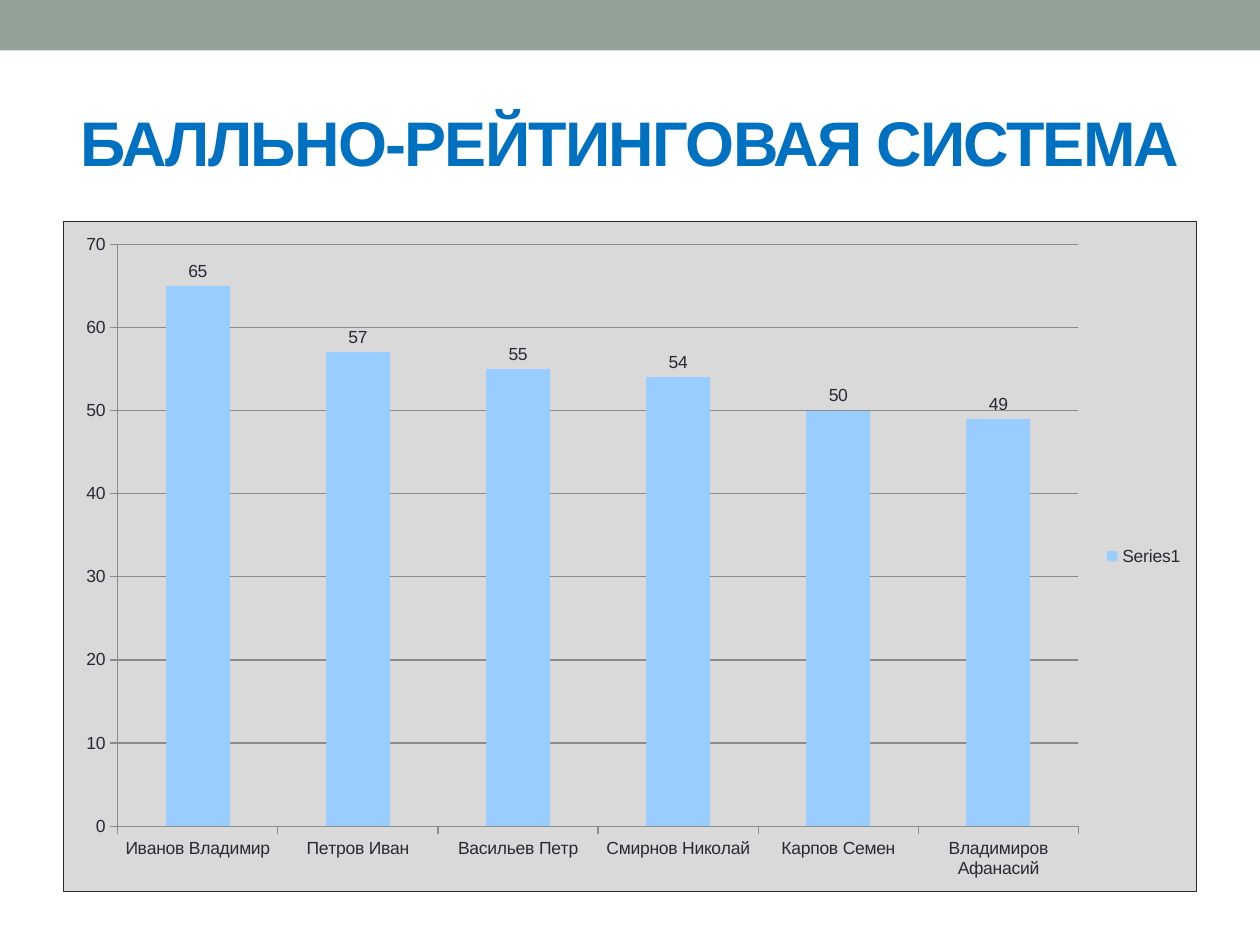
from lxml import etree
from pptx import Presentation
from pptx.chart.data import CategoryChartData
from pptx.dml.color import RGBColor
from pptx.enum.chart import (
    XL_CHART_TYPE as ChartType,
    XL_LABEL_POSITION as LabelPosition,
    XL_LEGEND_POSITION as LegendPosition,
    XL_TICK_MARK as TickMark,
)
from pptx.enum.shapes import MSO_SHAPE as Shape
from pptx.enum.text import MSO_ANCHOR as Anchor, MSO_AUTO_SIZE as AutoSize, PP_ALIGN as Align
from pptx.util import Inches, Pt

FONT = "Arial"
TEXT = "292934"
BAND = "93A299"
TITLE = "0070C0"
PANEL = "D9D9D9"
BAR = "99CCFF"
GRID = "8B8B8B"
SCORES = {
    "Иванов Владимир": 65,
    "Петров Иван": 57,
    "Васильев Петр": 55,
    "Смирнов Николай": 54,
    "Карпов Семен": 50,
    "Владимиров Афанасий": 49,
}
CHART_FRAME = """
<c:spPr xmlns:c="http://schemas.openxmlformats.org/drawingml/2006/chart"
        xmlns:a="http://schemas.openxmlformats.org/drawingml/2006/main">
  <a:solidFill><a:srgbClr val="{fill}"/></a:solidFill>
  <a:ln w="{width}"><a:solidFill><a:srgbClr val="{line}"/></a:solidFill></a:ln>
</c:spPr>
"""


def color(value):
    return RGBColor.from_string(value)


class SlideBuilder:
    def __init__(self, presentation):
        self.slide = presentation.slides.add_slide(presentation.slide_layouts[5])

    def style_font(self, font, size, value, bold=False):
        font.name = FONT
        font.size = Pt(size)
        font.bold = bold
        font.color.rgb = color(value)

    def band(self, left, top, width, height, fill):
        shape = self.slide.shapes.add_shape(
            Shape.RECTANGLE, Inches(left), Inches(top), Inches(width), Inches(height)
        )
        shape.shadow.inherit = False
        shape.fill.solid()
        shape.fill.fore_color.rgb = color(fill)
        shape.line.fill.background()

    def title(self, text, left, top, width, height):
        shape = self.slide.shapes.title
        shape.left, shape.top = Inches(left), Inches(top)
        shape.width, shape.height = Inches(width), Inches(height)
        frame = shape.text_frame
        frame.text = text
        frame.word_wrap = True
        frame.auto_size = AutoSize.NONE
        frame.vertical_anchor = Anchor.MIDDLE
        paragraph = frame.paragraphs[0]
        paragraph.alignment = Align.CENTER
        self.style_font(paragraph.font, 36, TITLE, bold=True)
        paragraph.runs[0].font._element.set("spc", "-100")

    def column_chart(self, scores, left, top, width, height):
        data = CategoryChartData()
        data.categories = list(scores)
        data.add_series("Series1", list(scores.values()))
        chart = self.slide.shapes.add_chart(
            ChartType.COLUMN_CLUSTERED,
            Inches(left), Inches(top), Inches(width), Inches(height), data,
        ).chart
        chart.has_title = False
        self.style_font(chart.font, 10, TEXT)
        self.frame_chart(chart)
        chart.has_legend = True
        chart.legend.position = LegendPosition.RIGHT
        chart.legend.include_in_layout = False

        plot = chart.plots[0]
        plot.vary_by_categories = False
        plot.gap_width = 150
        plot.has_data_labels = True
        plot.data_labels.show_value = True
        plot.data_labels.position = LabelPosition.OUTSIDE_END
        series_fill = plot.series[0].format.fill
        series_fill.solid()
        series_fill.fore_color.rgb = color(BAR)

        for axis in (chart.category_axis, chart.value_axis):
            axis.major_tick_mark = TickMark.OUTSIDE
            axis.minor_tick_mark = TickMark.NONE
            self.style_line(axis.format.line)
        value_axis = chart.value_axis
        value_axis.minimum_scale, value_axis.maximum_scale = 0, 70
        value_axis.major_unit = 10
        value_axis.has_major_gridlines = True
        self.style_line(value_axis.major_gridlines.format.line)

    def style_line(self, line):
        line.color.rgb = color(GRID)
        line.width = Pt(0.75)

    def frame_chart(self, chart):
        xml = CHART_FRAME.format(fill=PANEL, line=TEXT, width=Pt(0.75))
        chart.font._element.getparent().getparent().getparent().addprevious(
            etree.fromstring(xml)
        )


def main():
    presentation = Presentation()
    presentation.slide_width = Inches(10)
    presentation.slide_height = Inches(7.5)
    builder = SlideBuilder(presentation)
    builder.band(0, 0, 10, 0.4, BAND)
    builder.title("БАЛЛЬНО-РЕЙТИНГОВАЯ СИСТЕМА", 0.5, 0.58, 9, 1.08)
    builder.column_chart(SCORES, 0.5, 1.75, 9, 5.33)
    presentation.save("out.pptx")


if __name__ == "__main__":
    main()
